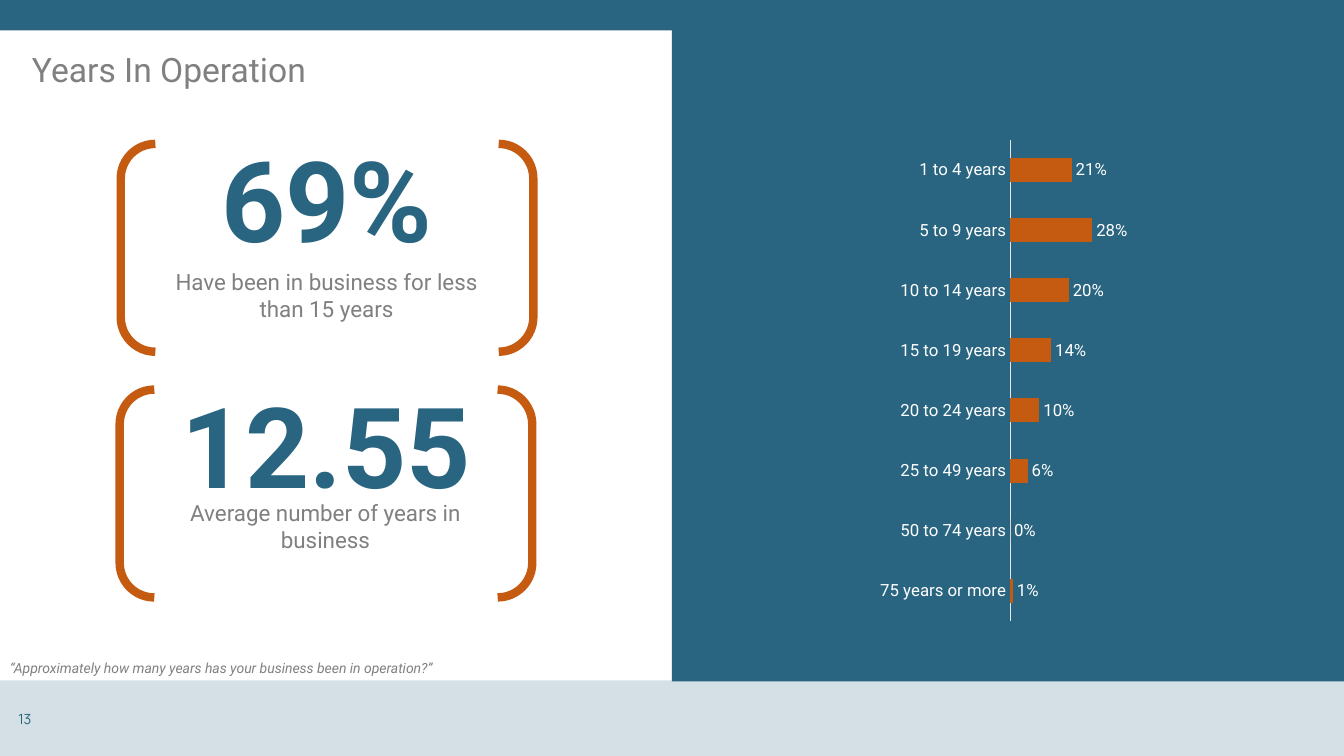
from lxml import etree
from pptx import Presentation, util as u
from pptx.chart.data import CategoryChartData
from pptx.dml.color import RGBColor
from pptx.enum import chart as ch, shapes, text
from pptx.oxml import parse_xml
from pptx.oxml.ns import nsdecls, qn

PX = 9525


class Theme:
    """Colours, fonts and type sizes of the slide."""
    teal, rust, grey = "296581", "C55A11", "808080"
    white, pale = "FFFFFF", "E7E6E6"
    face, alt = "Roboto", "Manrope"
    huge, title, body, chart, small = 80, 24, 16, 12, 10


def rgb(code):
    """Turn a hex code into a colour."""
    return RGBColor.from_string(code)


def emu(box):
    """Turn a box in px into EMU lengths."""
    return [u.Emu(n * PX) for n in box]


def style(font, size, color, **more):
    """Set the size, colour and other values of a font."""
    values = {"name": Theme.face, "size": u.Pt(size), **more}
    for key, value in values.items():
        setattr(font, key, value)
    font.color.rgb = rgb(color)


def write(slide, box, words, size, color, align="LEFT", anchor="TOP", space=1.0, **more):
    """Place a line of text in a box."""
    frame = slide.shapes.add_textbox(*emu(box)).text_frame
    frame.word_wrap = True
    frame.vertical_anchor = getattr(text.MSO_ANCHOR, anchor)
    para = frame.paragraphs[0]
    para.alignment = getattr(text.PP_ALIGN, align)
    para.line_spacing = space
    run = para.add_run()
    run.text = words
    style(run.font, size, color, **more)


def panel(slide, box, alpha=100):
    """Place a teal block, see-through when alpha is below 100."""
    block = slide.shapes.add_shape(shapes.MSO_SHAPE.RECTANGLE, *emu(box))
    block.shadow.inherit = False
    block.fill.solid()
    block.fill.fore_color.rgb = rgb(Theme.teal)
    block.line.fill.background()
    if alpha < 100:
        tint = block.fill._xPr.find(".//" + qn("a:srgbClr"))
        etree.SubElement(tint, qn("a:alpha"), val=str(alpha * 1000))


def fact(slide, box, figure, label, drop):
    """Place a bracketed figure with its label a given drop below the top."""
    x, y, w, h = box
    pair = slide.shapes.add_shape(shapes.MSO_SHAPE.DOUBLE_BRACKET, *emu(box))
    pair.shadow.inherit = False
    pair.fill.background()
    pair.line.color.rgb = rgb(Theme.rust)
    pair.line.width = u.Pt(6)
    write(slide, (x, y - 17, w, 139), figure, Theme.huge, Theme.teal, "CENTER", bold=True)
    write(slide, (x + 22, y + drop, w - 45, 61), label, Theme.body, Theme.grey, "CENTER")


def layout(chart, x, y, w, h):
    """Fix the inner plot area as shares of the chart."""
    parts = "".join(f'<c:{key} val="{value}"/>' for key, value in (
        ("layoutTarget", "inner"), ("xMode", "edge"), ("yMode", "edge"),
        ("x", x), ("y", y), ("w", w), ("h", h)))
    plot = chart._chartSpace.chart.plotArea
    for old in plot.findall(qn("c:layout")):
        plot.remove(old)
    plot.insert(0, parse_xml(
        f'<c:layout {nsdecls("c")}><c:manualLayout>{parts}</c:manualLayout></c:layout>'))


def bars(slide, box, rows):
    """Place the bar chart of shares, first row on top."""
    data = CategoryChartData(number_format="0%")
    data.categories = [name for name, _ in reversed(rows)]
    data.add_series("Series 1", [share for _, share in reversed(rows)])
    chart = slide.shapes.add_chart(
        ch.XL_CHART_TYPE.BAR_CLUSTERED, *emu(box), data).chart
    chart.has_legend = chart.has_title = False
    style(chart.font, Theme.chart, Theme.white)
    layout(chart, 0.5, 0.03, 0.44, 0.95)

    axis = chart.category_axis
    axis.major_tick_mark = ch.XL_TICK_MARK.NONE
    axis.format.line.color.rgb = rgb(Theme.pale)
    axis.format.line.width = u.Pt(0.75)
    scale = {"visible": False, "minimum_scale": 0, "maximum_scale": 1,
             "has_major_gridlines": False}
    for key, value in scale.items():
        setattr(chart.value_axis, key, value)

    plot = chart.plots[0]
    plot.gap_width = 150
    plot.vary_by_categories = False
    fill = plot.series[0].format.fill
    fill.solid()
    fill.fore_color.rgb = rgb(Theme.rust)
    plot.has_data_labels = True
    tags = {"show_value": True, "number_format": "0%",
            "number_format_is_linked": False,
            "position": ch.XL_LABEL_POSITION.OUTSIDE_END}
    for key, value in tags.items():
        setattr(plot.data_labels, key, value)
    style(plot.data_labels.font, Theme.chart, Theme.white)


def frame(slide, w, h):
    """Place the page blocks and the page number."""
    panel(slide, (0, h - 72, w, 72), alpha=20)
    panel(slide, (w // 2, 0, w // 2, h - 71))
    panel(slide, (0, 0, w, 29))
    write(slide, (8, h - 54, 288, 38), "13", Theme.small, Theme.teal,
          anchor="MIDDLE", name=Theme.alt)


def main():
    """Build and save the slide."""
    deck = Presentation()
    w, h = 1280, 720
    deck.slide_width, deck.slide_height = emu((w, h))
    slide = deck.slides.add_slide(deck.slide_layouts[6])
    frame(slide, w, h)
    write(slide, (21, 46, 426, 63), "Years In Operation",
          Theme.title, Theme.grey, space=0.9)
    bars(slide, (644, 119, 636, 482), [
        ("1 to 4 years", 0.21), ("5 to 9 years", 0.28),
        ("10 to 14 years", 0.2), ("15 to 19 years", 0.14),
        ("20 to 24 years", 0.1), ("25 to 49 years", 0.06),
        ("50 to 74 years", 0), ("75 years or more", 0.01)])
    write(slide, (0, 625, 515, 24),
          "“Approximately how many years has your business been in operation?”",
          Theme.small, Theme.grey, space=0.9, italic=True)
    fact(slide, (115, 137, 393, 198), "69%",
         "Have been in business for less than 15 years", 114)
    fact(slide, (114, 371, 393, 198), "12.55",
         "Average number of years in business", 100)
    deck.save("out.pptx")


if __name__ == "__main__":
    main()
